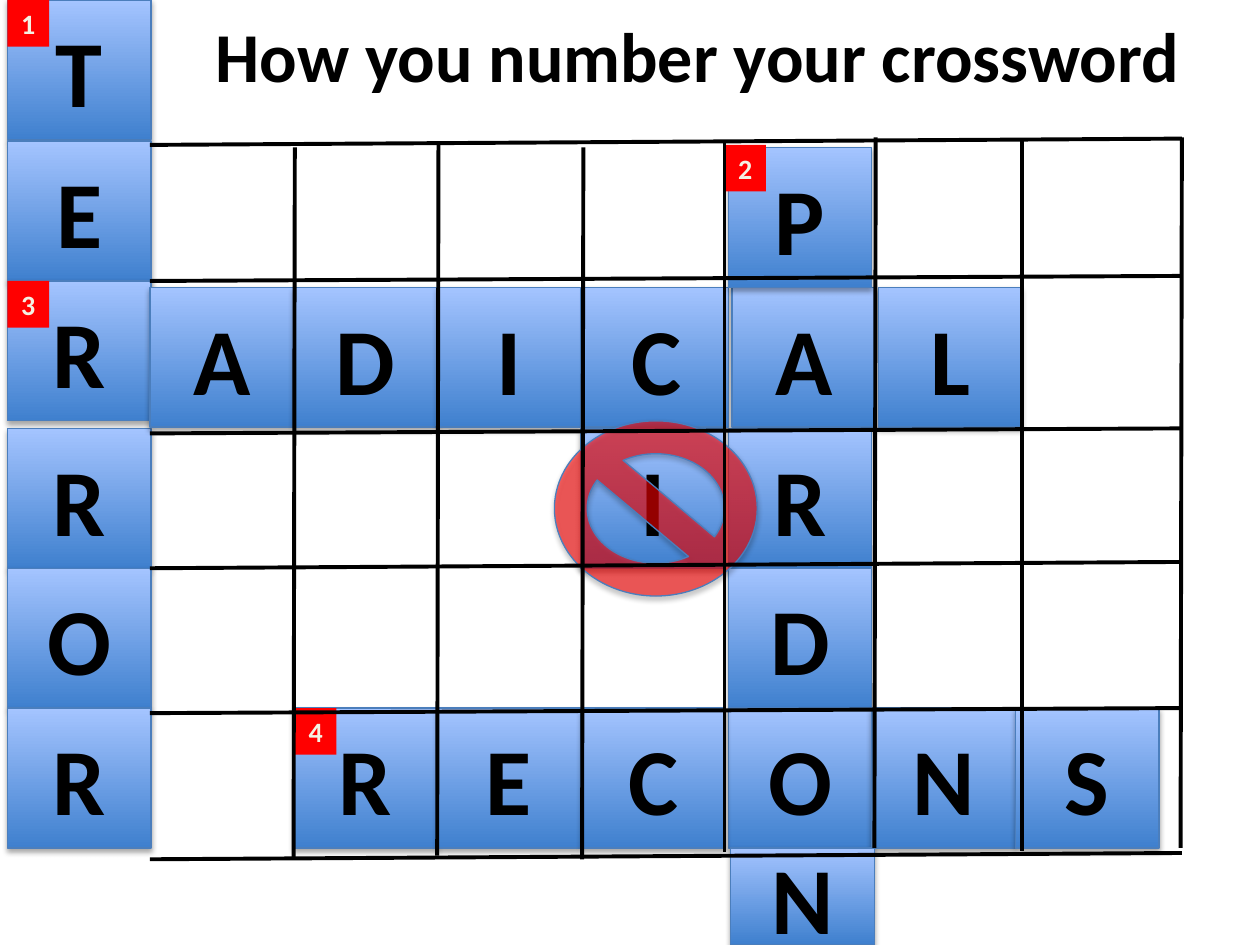
from lxml import etree
from pptx import Presentation
from pptx.dml.color import RGBColor
from pptx.enum.shapes import MSO_CONNECTOR, MSO_SHAPE
from pptx.enum.text import MSO_ANCHOR, MSO_AUTO_SIZE, PP_ALIGN
from pptx.oxml import parse_xml
from pptx.oxml.ns import nsdecls, qn
from pptx.util import Inches, Pt

RECTANGLE, NO_SYMBOL = MSO_SHAPE.RECTANGLE, MSO_SHAPE.NO_SYMBOL
STRAIGHT = MSO_CONNECTOR.STRAIGHT
TOP, MIDDLE = MSO_ANCHOR.TOP, MSO_ANCHOR.MIDDLE
CENTER = PP_ALIGN.CENTER
FIT_SHAPE = MSO_AUTO_SIZE.SHAPE_TO_FIT_TEXT

FONT = "Calibri"
COLORS = {
    "ink": "000000",
    "tile_bottom": "3F80CE",
    "tile_top": "A4C4FF",
    "edge": "4B7EBC",
    "red": "FF0000",
    "number": "F4F1E3",
    "number_edge": "054697",
}

TILE_W, TILE_H = 1.14, 1.11
ROWS = [1.17, 2.28, 3.4, 4.51, 5.62]
COLUMN_P = 5.78

# Each word: its letters and the left and top of every tile
WORDS = [
    ("TERROR", [(0.06, y) for y in (0, 1.12, 2.23, *ROWS[2:])]),
    ("ADICAL", [(x, ROWS[1]) for x in (1.19, 2.33, 3.47, 4.64, 5.81, 6.97)]),
    ("PRDO", [(COLUMN_P, y) for y in (ROWS[0], *ROWS[2:])]),
    ("I", [(4.61, ROWS[2])]),
    ("RECNS", [(x, ROWS[4]) for x in (2.33, 3.47, 4.62, 6.92, 8.06)]),
]
CLUE_CORNERS = [(0.06, 0), (5.75, 1.15), (0.06, 2.23), (2.34, 5.62)]

# Rows: height at the left and right end; columns: bottom and top point
ROW_LINES = [(1.15, 1.1), (2.23, 2.19), (3.44, 3.4),
             (4.51, 4.46), (5.66, 5.62), (6.82, 6.77)]
COLUMN_LINES = [
    (2.33, 6.82, 2.34, 1.17), (3.47, 6.79, 3.48, 1.15),
    (4.62, 6.82, 4.63, 1.17), (5.75, 6.76, 5.75, 1.12),
    (6.94, 6.73, 6.95, 1.09), (8.11, 6.75, 8.11, 1.1),
    (9.37, 6.73, 9.38, 1.09),
]


def rgb(name):
    return RGBColor.from_string(COLORS[name])


def write_text(shape, text, *, size, color="ink", anchor=MIDDLE, wrap=True):
    frame = shape.text_frame
    frame.word_wrap = wrap
    frame.vertical_anchor = anchor
    paragraph = frame.paragraphs[0]
    paragraph.alignment = CENTER
    run = paragraph.add_run()
    run.text = text
    run.font.name = FONT
    run.font.size = Pt(size)
    run.font.bold = True
    run.font.color.rgb = rgb(color)
    return run


def add_plain_shape(slide, kind, left, top, width, height):
    shape = slide.shapes.add_shape(
        kind, Inches(left), Inches(top), Inches(width), Inches(height))
    shape.shadow.inherit = False
    return shape


def add_edge_and_shadow(shape):
    shape.line.color.rgb = rgb("edge")
    shape.line.width = Pt(0.75)
    effects = shape._element.spPr.find(qn("a:effectLst"))
    effects.append(parse_xml(
        f'<a:outerShdw {nsdecls("a")} blurRad="40000" dist="23000" '
        'dir="5400000" rotWithShape="0">'
        f'<a:srgbClr val="{COLORS["ink"]}"><a:alpha val="35000"/></a:srgbClr>'
        '</a:outerShdw>'))


def add_letter_tile(slide, letter, left, top, height=TILE_H):
    tile = add_plain_shape(slide, RECTANGLE, left, top, TILE_W, height)
    tile.fill.gradient()
    tile.fill.gradient_angle = 90
    for stop, name in zip(tile.fill.gradient_stops, ("tile_bottom", "tile_top")):
        stop.color.rgb = rgb(name)
    add_edge_and_shadow(tile)
    write_text(tile, letter, size=54)


def add_forbidden_sign(slide):
    sign = add_plain_shape(slide, NO_SYMBOL, 4.4, 3.34, 1.61, 1.39)
    sign.fill.solid()
    sign.fill.fore_color.rgb = rgb("red")
    red = sign._element.spPr.find(qn("a:solidFill")).find(qn("a:srgbClr"))
    etree.SubElement(red, qn("a:alpha")).set("val", "58000")
    add_edge_and_shadow(sign)


def add_clue_number(slide, number, left, top):
    badge = add_plain_shape(slide, RECTANGLE, left, top, 0.33, 0.37)
    badge.fill.solid()
    badge.fill.fore_color.rgb = rgb("red")
    badge.line.fill.background()
    run = write_text(badge, str(number), size=16, color="number",
                     anchor=TOP, wrap=False)
    badge.text_frame.auto_size = FIT_SHAPE
    run._r.get_or_add_rPr().insert(0, parse_xml(
        f'<a:ln {nsdecls("a")} w="12700"><a:solidFill>'
        f'<a:srgbClr val="{COLORS["number_edge"]}"/></a:solidFill></a:ln>'))


def add_grid_line(slide, x1, y1, x2, y2):
    line = slide.shapes.add_connector(
        STRAIGHT, Inches(x1), Inches(y1), Inches(x2), Inches(y2))
    line.line.color.rgb = rgb("ink")
    line.line.width = Pt(2.25)
    etree.SubElement(line._element.spPr, qn("a:effectLst"))


def add_title(slide, text):
    title = slide.shapes.title
    title.left, title.top = Inches(1.44), Inches(0.03)
    title.width, title.height = Inches(8.19), Inches(0.8)
    write_text(title, text, size=40)


def main():
    prs = Presentation()
    prs.slide_width, prs.slide_height = Inches(10), Inches(7.5)
    slide = prs.slides.add_slide(prs.slide_layouts[5])
    add_title(slide, "How you number your crossword")

    for letters, places in WORDS:
        for letter, (left, top) in zip(letters, places):
            add_letter_tile(slide, letter, left, top)
    add_letter_tile(slide, "N", 5.8, 6.73, height=0.77)

    add_forbidden_sign(slide)
    for number, (left, top) in enumerate(CLUE_CORNERS, start=1):
        add_clue_number(slide, number, left, top)

    for left_y, right_y in ROW_LINES:
        add_grid_line(slide, 1.19, left_y, 9.38, right_y)
    for ends in COLUMN_LINES:
        add_grid_line(slide, *ends)

    prs.save("out.pptx")


if __name__ == "__main__":
    main()
